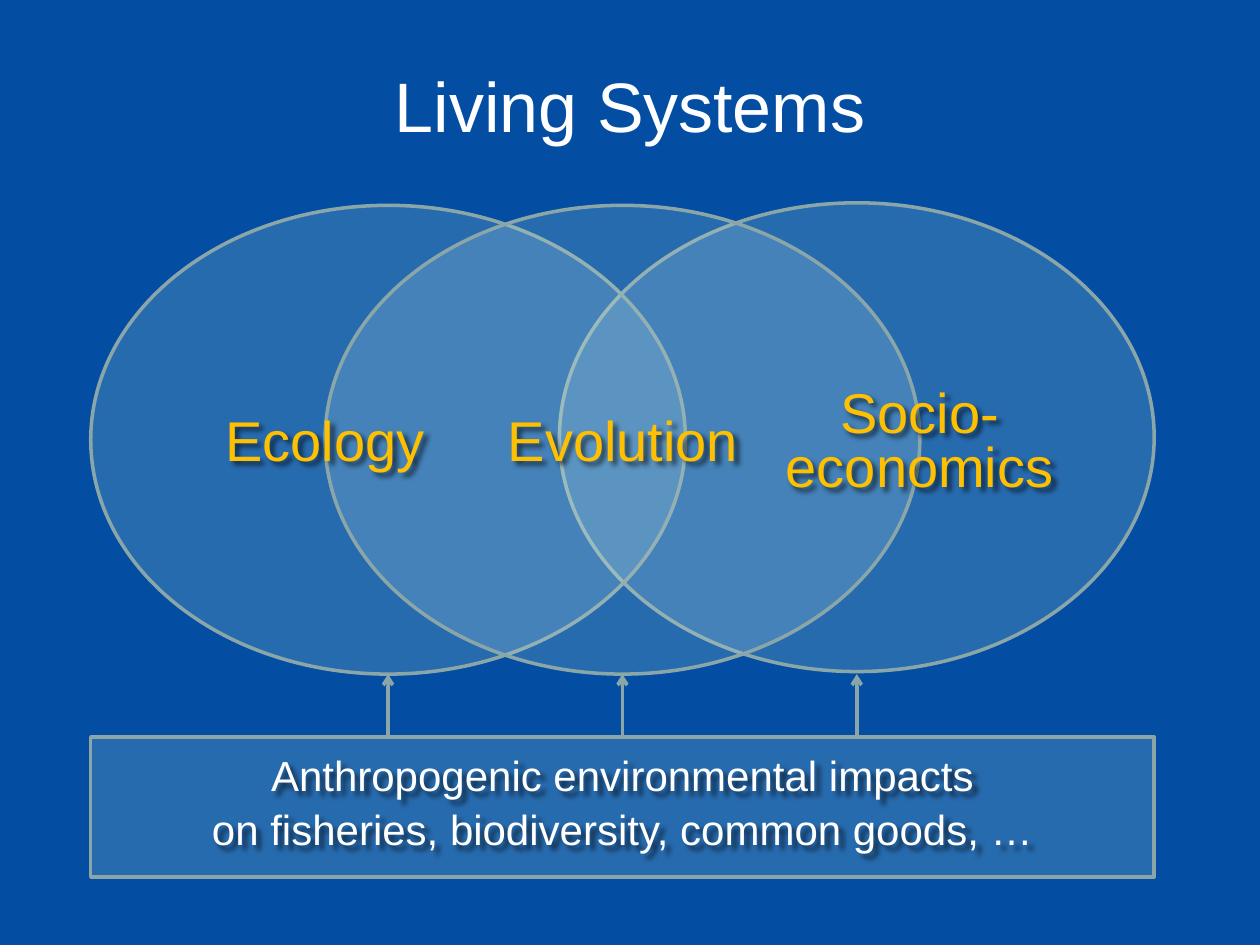
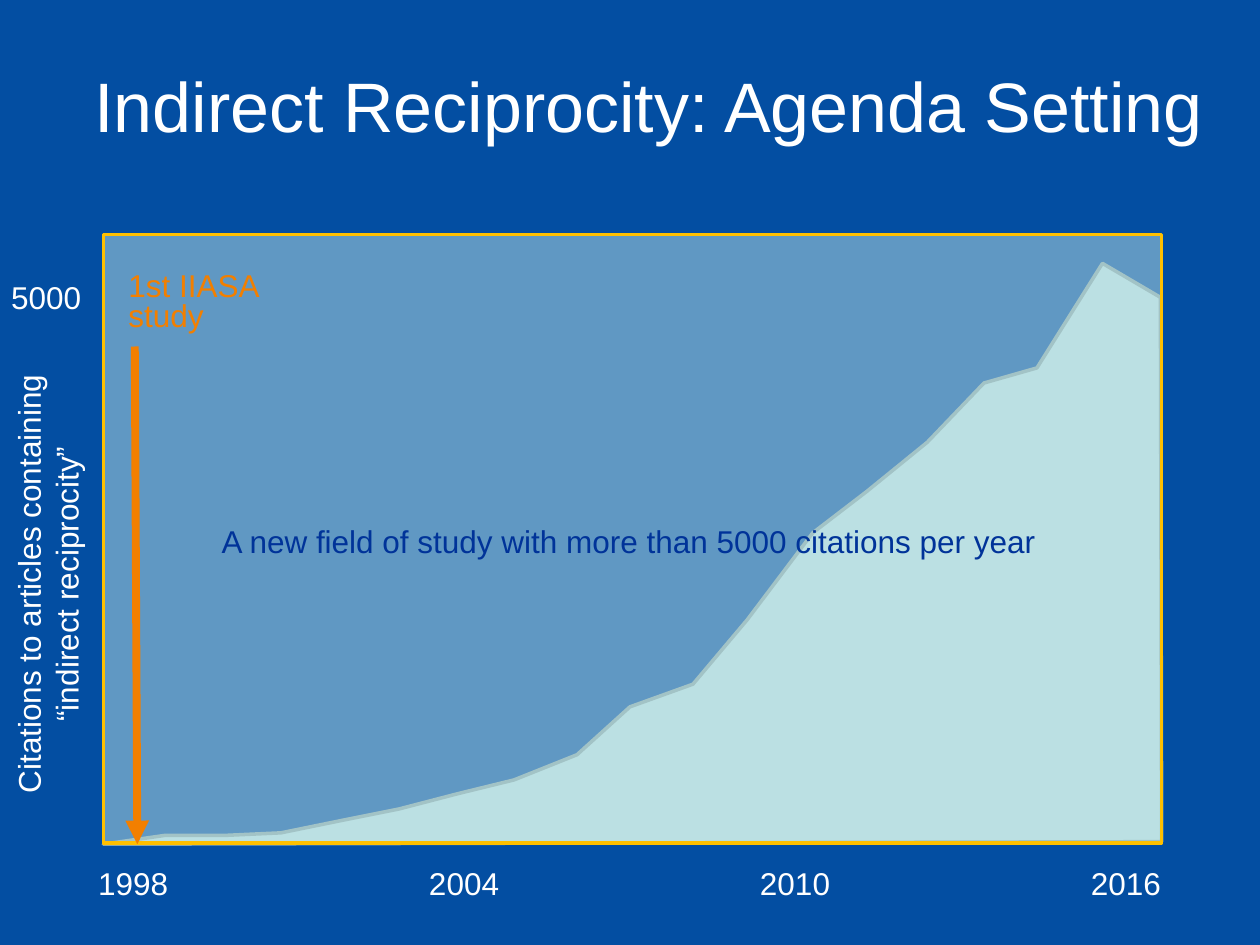
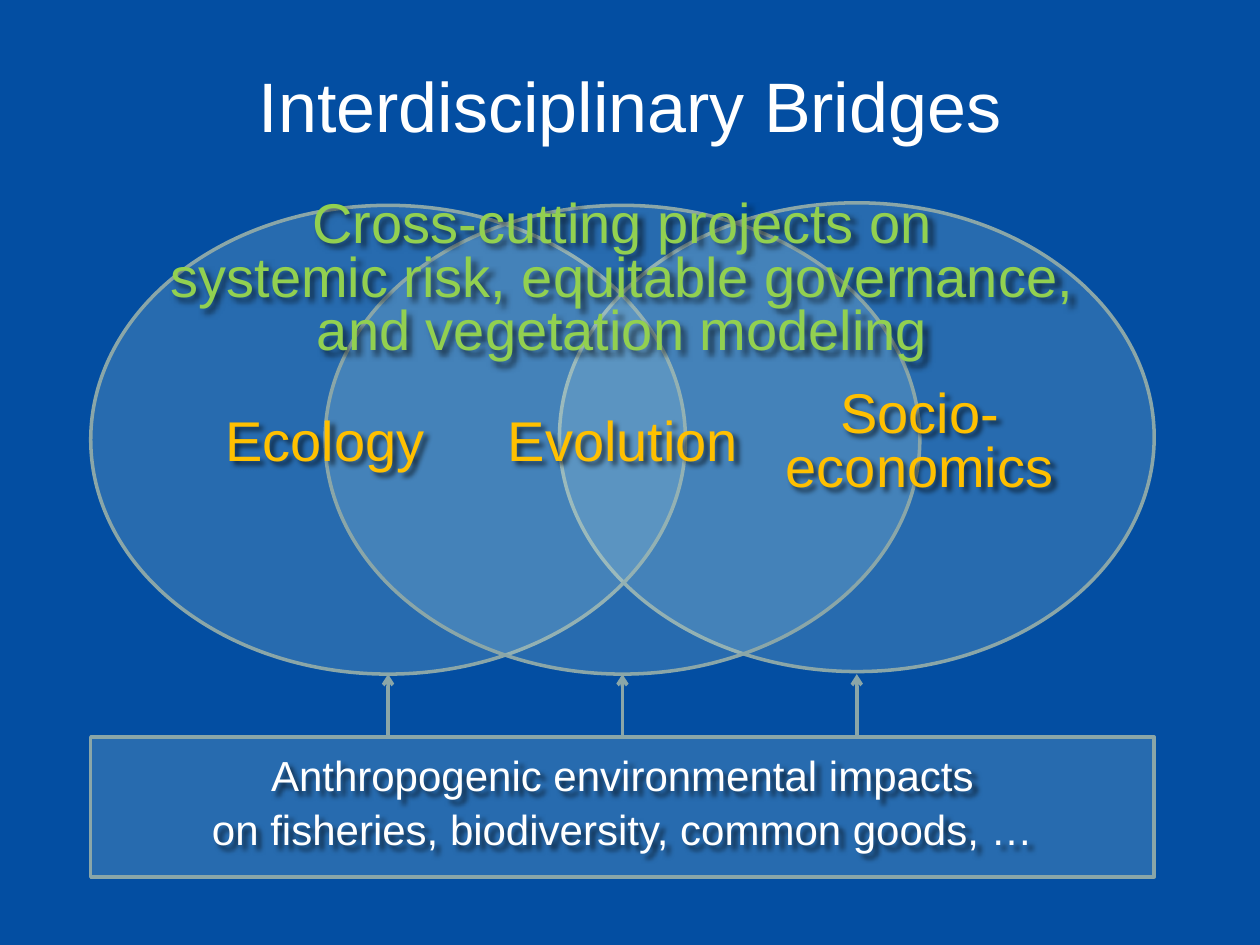
import dataclasses
import typing

import lxml.etree
import pptx
import pptx.dml.color
import pptx.enum.shapes
import pptx.enum.text
import pptx.oxml.ns
import pptx.util

SLIDE_WIDTH = pptx.util.Inches(10)
SLIDE_HEIGHT = pptx.util.Inches(7.5)
COLUMNS, ROWS = 100, 75
FONT = "Arial"
COLOURS = {
    "background": "034EA2",
    "pale": "BBE0E3",
    "outline": "8AA6A8",
    "white": "FFFFFF",
    "gold": "FFC000",
    "orange": "F27F00",
    "navy": "003399",
    "green": "92D050",
}
SHAPES = pptx.enum.shapes.MSO_SHAPE
LEFT = pptx.enum.text.PP_ALIGN.LEFT
CENTER = pptx.enum.text.PP_ALIGN.CENTER


class Frame(typing.NamedTuple):
    column: float
    row: float
    width: float
    height: float


@dataclasses.dataclass(frozen=True)
class Label:
    text: str
    frame: Frame
    size: float = 18
    colour: str = "white"
    alignment: int = LEFT
    wrap: bool = False
    spacing: float | None = None
    shadow: bool = False
    rotation: float = 0


ELLIPSE_WIDTH, ELLIPSE_STEP = 47.2, 18.6
ELLIPSES = [Frame(7.2 + ELLIPSE_STEP * index, row, ELLIPSE_WIDTH, 37.2)
            for index, row in ((2, 16.1), (0, 16.3), (1, 16.3))]
IMPACT_BOX = Frame(7.2, 58.5, 84.4, 11.1)
ARROW_TIP_ROW = 53.5

SYSTEM_LABELS = [
    Label("Anthropogenic environmental impacts", Frame(7.2, 59, 84.4, 8.4),
          24, "white", CENTER, wrap=True, shadow=True),
    Label("Evolution", Frame(39.2, 31.7, 20.5, 6.4), 32, "gold", CENTER, shadow=True),
    Label("Ecology", Frame(16.8, 31.7, 18, 6.4), 32, "gold", CENTER, shadow=True),
    Label("Socio-\veconomics", Frame(61.3, 30.5, 23.4, 9.6),
          32, "gold", CENTER, spacing=0.8, shadow=True),
    Label("on fisheries, biodiversity, common goods, …", Frame(7.2, 63.3, 84.4, 5),
          24, "white", CENTER, wrap=True, shadow=True),
]
PROJECTS_LABEL = Label(
    "Cross-cutting projects on\nsystemic risk, equitable governance,\vand vegetation modeling",
    Frame(12.3, 15.4, 74.2, 13.9), 32, "green", CENTER, spacing=0.8, shadow=True)

PLOT = Frame(8.2, 18.6, 84, 48.3)
CITATION_CURVE = [
    (8.2, 67), (13.1, 66.3), (17.9, 66.3), (22.3, 66.1), (27.2, 65.1),
    (31.7, 64.2), (36.3, 63), (40.8, 61.9), (45.8, 59.9), (50, 56.1),
    (55, 54.3), (59.3, 49.2), (64.5, 42.3), (68.8, 39), (73.6, 35.1),
    (78.1, 30.4), (82.3, 29.2), (87.5, 20.9), (92.1, 23.6), (92.2, 66.8),
]
YEARS = range(1998, 2017, 6)
FIRST_YEAR_COLUMN, LAST_YEAR_COLUMN = 6.8, 85.6
YEAR_STEP = (LAST_YEAR_COLUMN - FIRST_YEAR_COLUMN) / (len(YEARS) - 1)
CHART_LABELS = [
    Label("5000", Frame(-0.1, 21.6, 7.7, 4)),
    *(Label(str(year), Frame(FIRST_YEAR_COLUMN + YEAR_STEP * index, 68.1, 7.7, 4))
      for index, year in enumerate(YEARS)),
    Label("1st IIASA\vstudy", Frame(9.2, 21.2, 12.5, 5.9), colour="orange", spacing=0.8),
    Label("A new field of study with more than 5000 citations per year",
          Frame(16.6, 40.9, 67.2, 4), colour="navy"),
    Label("Citations to articles containing\v“indirect reciprocity”",
          Frame(-16.9, 42.8, 41.4, 7.1), alignment=CENTER, wrap=True, rotation=270),
]


def across(columns: float) -> int:
    return round(SLIDE_WIDTH * columns / COLUMNS)


def down(rows: float) -> int:
    return round(SLIDE_HEIGHT * rows / ROWS)


def place(frame: Frame) -> tuple[int, int, int, int]:
    return across(frame.column), down(frame.row), across(frame.width), down(frame.height)


def colour(name: str) -> pptx.dml.color.RGBColor:
    return pptx.dml.color.RGBColor.from_string(COLOURS[name])


def add_element(parent, tag: str, **attributes: str):
    element = lxml.etree.SubElement(parent, pptx.oxml.ns.qn(tag))
    for name, value in attributes.items():
        element.set(name, value)
    return element


def style_shape(shape, outline: str, opacity: int = 100) -> None:
    shape.shadow.inherit = False
    shape.fill.solid()
    shape.fill.fore_color.rgb = colour("pale")
    shape.line.color.rgb = colour(outline)
    shape.line.width = pptx.util.Pt(2)
    if opacity < 100:
        fill_colour = shape.fill._xPr.find(".//" + pptx.oxml.ns.qn("a:srgbClr"))
        add_element(fill_colour, "a:alpha", val=str(opacity * 1000))


def add_panel(slide, kind, frame: Frame, outline: str = "outline", opacity: int = 20):
    shape = slide.shapes.add_shape(kind, *place(frame))
    style_shape(shape, outline, opacity)
    return shape


def add_text_shadow(shape) -> None:
    effects = add_element(shape._element.spPr, "a:effectLst")
    shadow = add_element(effects, "a:outerShdw", blurRad="38100", dist="38100",
                         dir="2700000", algn="tl")
    black = add_element(shadow, "a:srgbClr", val="000000")
    add_element(black, "a:alpha", val="60000")


def add_label(slide, label: Label):
    shape = slide.shapes.add_textbox(*place(label.frame))
    shape.rotation = label.rotation
    text_frame = shape.text_frame
    text_frame.word_wrap = label.wrap
    text_frame.auto_size = pptx.enum.text.MSO_AUTO_SIZE.SHAPE_TO_FIT_TEXT
    text_frame.text = label.text
    for paragraph in text_frame.paragraphs:
        paragraph.alignment = label.alignment
        if label.spacing:
            paragraph.line_spacing = label.spacing
        paragraph.font.name = FONT
        paragraph.font.size = pptx.util.Pt(label.size)
        paragraph.font.color.rgb = colour(label.colour)
    if label.shadow:
        add_text_shadow(shape)
    return shape


def add_title(slide, text: str, column: float = 0, alignment: int = CENTER) -> None:
    frame = Frame(column, 5, COLUMNS - column, 12.5)
    shape = add_label(slide, Label(text, frame, 40, alignment=alignment, wrap=True))
    text_frame = shape.text_frame
    text_frame.auto_size = pptx.enum.text.MSO_AUTO_SIZE.NONE
    text_frame.margin_left = text_frame.margin_right = 0
    text_frame.margin_top = text_frame.margin_bottom = 0


def add_arrow(slide, start: tuple[float, float], end: tuple[float, float],
              line_colour: str, width: float, head: str):
    arrow = slide.shapes.add_connector(
        pptx.enum.shapes.MSO_CONNECTOR.STRAIGHT,
        across(start[0]), down(start[1]), across(end[0]), down(end[1]))
    arrow.line.color.rgb = colour(line_colour)
    arrow.line.width = pptx.util.Pt(width)
    add_element(arrow.line._get_or_add_ln(), "a:tailEnd", type=head)
    add_element(arrow._element.spPr, "a:effectLst")
    return arrow


def add_slide(presentation):
    return presentation.slides.add_slide(presentation.slide_layouts[6])


def add_systems_slide(presentation, title: str, extra_labels: typing.Sequence[Label] = ()) -> None:
    slide = add_slide(presentation)
    for frame in ELLIPSES:
        add_panel(slide, SHAPES.OVAL, frame)
    add_title(slide, title)
    impact_box = add_panel(slide, SHAPES.RECTANGLE, IMPACT_BOX)
    box_middle = IMPACT_BOX.column + IMPACT_BOX.width / 2
    for frame in ELLIPSES:
        middle = frame.column + frame.width / 2
        arrow = add_arrow(slide, (middle, IMPACT_BOX.row), (middle, ARROW_TIP_ROW),
                          "outline", 2, "arrow")
        if math_close(middle, box_middle):
            arrow.begin_connect(impact_box, 0)
    for label in (*SYSTEM_LABELS, *extra_labels):
        add_label(slide, label)


def math_close(first: float, second: float) -> bool:
    return abs(first - second) < 0.1


def add_citations_slide(presentation) -> None:
    slide = add_slide(presentation)
    points = [(across(column), down(row)) for column, row in CITATION_CURVE]
    builder = slide.shapes.build_freeform(*points[0])
    builder.add_line_segments(points[1:], close=True)
    style_shape(builder.convert_to_shape(), "outline")
    add_panel(slide, SHAPES.RECTANGLE, PLOT, "gold", 51)
    add_title(slide, "Indirect Reciprocity: Agenda Setting", 7.5, LEFT)
    add_arrow(slide, (10.7, 27.5), (10.9, 67), "orange", 4.5, "triangle")
    for label in CHART_LABELS:
        add_label(slide, label)


def main() -> None:
    presentation = pptx.Presentation()
    presentation.slide_width = SLIDE_WIDTH
    presentation.slide_height = SLIDE_HEIGHT
    background = presentation.slide_master.background.fill
    background.solid()
    background.fore_color.rgb = colour("background")
    add_systems_slide(presentation, "Living Systems")
    add_citations_slide(presentation)
    add_systems_slide(presentation, "Interdisciplinary Bridges", [PROJECTS_LABEL])
    presentation.save("out.pptx")


if __name__ == "__main__":
    main()
